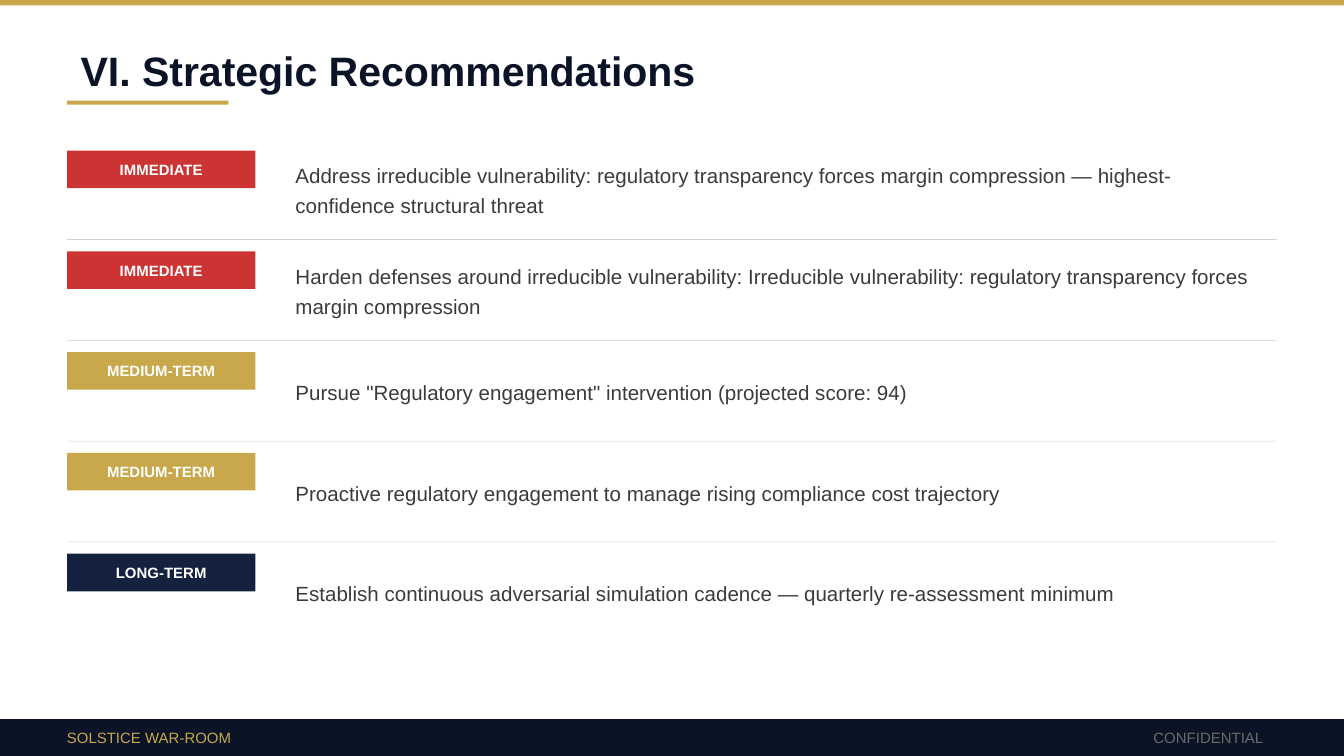
from pptx import Presentation
from pptx.dml.color import RGBColor
from pptx.enum.shapes import MSO_SHAPE
from pptx.enum.text import MSO_ANCHOR, MSO_AUTO_SIZE, PP_ALIGN
from pptx.util import Inches, Pt

COLORS = {
    "gold": "C9A84C",
    "midnight": "0B1426",
    "navy": "142240",
    "red": "CC3333",
    "rule": "D4D0C8",
    "body": "3D3B39",
    "muted": "6B6966",
    "white": "FFFFFF",
}


def add_bar(left, top, width, height, color):
    """Add a borderless rectangle in one of the palette colours."""
    bar = slide.shapes.add_shape(
        MSO_SHAPE.RECTANGLE, Inches(left), Inches(top), Inches(width), Inches(height)
    )
    bar.shadow.inherit = False
    bar.fill.solid()
    bar.fill.fore_color.rgb = RGBColor.from_string(COLORS[color])
    bar.line.fill.background()
    return bar


def write_text(shape, text, size, color, bold=False, align=PP_ALIGN.LEFT, spacing=None):
    """Fill a shape with one vertically centred paragraph."""
    frame = shape.text_frame
    frame.word_wrap = True
    frame.auto_size = MSO_AUTO_SIZE.NONE
    frame.vertical_anchor = MSO_ANCHOR.MIDDLE
    para = frame.paragraphs[0]
    para.alignment = align
    if spacing:
        para.line_spacing = spacing
    span = para.add_run()
    span.text = text
    font_values = {"name": "Arial", "size": Pt(size), "bold": bold}
    for name, value in font_values.items():
        setattr(span.font, name, value)
    span.font.color.rgb = RGBColor.from_string(COLORS[color])


# Widescreen, 16:9
deck = Presentation()
deck.slide_width = Inches(10)
deck.slide_height = Inches(10 * 9 / 16)
slide = deck.slides.add_slide(deck.slide_layouts[5])

# Top band and footer
add_bar(0, 0, 10, 0.04, "gold")
add_bar(0, 5.35, 10, 0.28, "midnight")
footers = [
    ("SOLSTICE WAR-ROOM", 0.4, 4, "gold", PP_ALIGN.LEFT),
    ("CONFIDENTIAL", 6.5, 3, "muted", PP_ALIGN.RIGHT),
]
for text, left, width, color, align in footers:
    box = slide.shapes.add_textbox(
        Inches(left), Inches(5.35), Inches(width), Inches(0.28)
    )
    write_text(box, text, 8, color, align=align)

# Title with its underline
title = slide.shapes.title
title_place = {"left": 0.5, "top": 0.3, "width": 9, "height": 0.45}
for name, value in title_place.items():
    setattr(title, name, Inches(value))
write_text(title, "VI. Strategic Recommendations", 22, "midnight", bold=True)
add_bar(0.5, 0.75, 1.2, 0.03, "gold")

# Recommendations, one row each, with a hairline between rows
recommendations = [
    ("IMMEDIATE", "red",
     "Address irreducible vulnerability: regulatory transparency forces margin "
     "compression — highest-confidence structural threat"),
    ("IMMEDIATE", "red",
     "Harden defenses around irreducible vulnerability: Irreducible vulnerability: "
     "regulatory transparency forces margin compression"),
    ("MEDIUM-TERM", "gold",
     'Pursue "Regulatory engagement" intervention (projected score: 94)'),
    ("MEDIUM-TERM", "gold",
     "Proactive regulatory engagement to manage rising compliance cost trajectory"),
    ("LONG-TERM", "navy",
     "Establish continuous adversarial simulation cadence — quarterly "
     "re-assessment minimum"),
]
ROW_TOP, ROW_PITCH = 1.1, 0.75
HAIRLINE = 0.01 / 2
for index, (horizon, color, advice) in enumerate(recommendations):
    top = ROW_TOP + index * ROW_PITCH
    if index:
        add_bar(0.5, top - 0.07, 9, HAIRLINE, "rule")
    badge = add_bar(0.5, top + 0.02, 1.4, 0.28, color)
    write_text(badge, horizon, 8, "white", bold=True, align=PP_ALIGN.CENTER)
    box = slide.shapes.add_textbox(Inches(2.1), Inches(top), Inches(7.3), Inches(0.6))
    write_text(box, advice, 11, "body", spacing=1.2)

deck.save("out.pptx")
